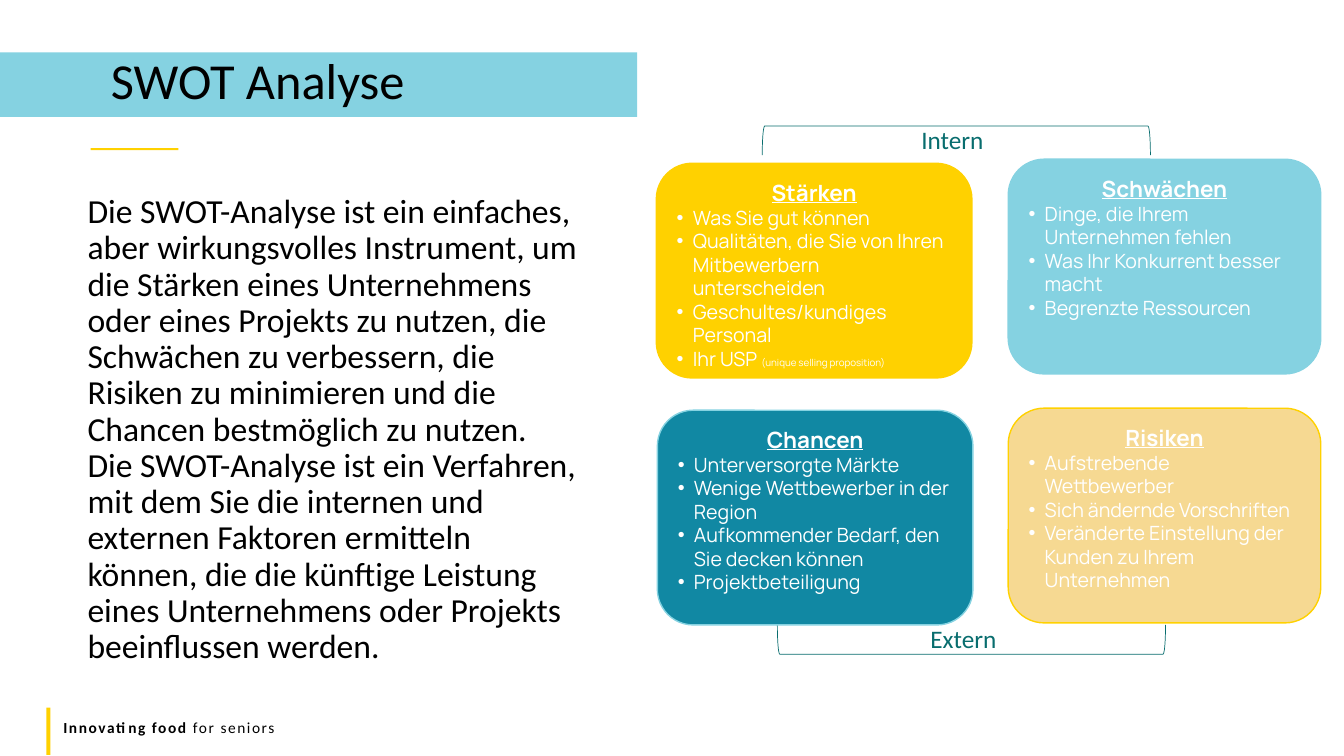
from lxml.etree import SubElement
from pptx import Presentation
from pptx.dml.color import RGBColor
from pptx.enum.shapes import MSO_SHAPE
from pptx.enum.text import MSO_ANCHOR, PP_ALIGN
from pptx.oxml.ns import qn
from pptx.util import Pt

PX = 9144  # EMU per px, 100 px to the inch
YELLOW, SKY, TEAL, SAND = "FFD100", "85D2E1", "1188A3", "F6D992"
GREEN, BLACK, WHITE = "086D6E", "000000", "FFFFFF"
hue = RGBColor.from_string

deck = Presentation()
deck.slide_width, deck.slide_height = 1333 * PX, 750 * PX
slide = deck.slides.add_slide(deck.slide_layouts[5])
shapes = slide.shapes


def draw(kind, at, fill=None, line=None, width=1):
    """Add a preset shape, or a text box when kind is None."""
    area = [n * PX for n in at]
    if kind is None:
        item = shapes.add_textbox(*area)
        item.text_frame.word_wrap = True
        return item
    item = shapes.add_shape(kind, *area)
    item.shadow.inherit = False
    for part, tint in ((item.fill, fill), (item.line.fill, line)):
        if tint:
            part.solid()
            part.fore_color.rgb = hue(tint)
        else:
            part.background()
    if line:
        item.line.width = Pt(width)
    return item


def write(par, text, size, tint, name="Calibri", **form):
    run = par.add_run()
    run.text = text
    form.update(size=Pt(size), name=name)
    for key, value in form.items():
        setattr(run.font, key, value)
    run.font.color.rgb = hue(tint)
    return run


# Title band and accents
title = shapes.title
band = {"left": 0, "top": 52, "width": 632, "height": 64}
for key, value in band.items():
    setattr(title, key, value * PX)
title.fill.solid()
title.fill.fore_color.rgb = hue(SKY)
frame = title.text_frame
look = {"margin_left": 110 * PX, "vertical_anchor": MSO_ANCHOR.MIDDLE, "word_wrap": True}
for key, value in look.items():
    setattr(frame, key, value)
par = frame.paragraphs[0]
par.alignment, par.line_spacing = PP_ALIGN.LEFT, 0.8
write(par, "SWOT Analyse", 36, BLACK)

for at in ((90, 147, 87, 2), (46, 702, 4, 47)):
    draw(MSO_SHAPE.RECTANGLE, at, YELLOW)

# Footer
par = draw(None, (53, 707, 1200, 29)).text_frame.paragraphs[0]
for text, bold in (("Innovating food ", True), ("for seniors", False)):
    run = write(par, text, 11, BLACK, bold=bold)
    run.font._element.set("spc", "110")

# Explanation
frame = draw(None, (77, 188, 506, 483)).text_frame
par = frame.paragraphs[0]
par.line_spacing = 0.9
write(par, "Die SWOT-Analyse ist ein einfaches, aber wirkungsvolles Instrument, "
      "um die Stärken eines Unternehmens oder eines Projekts zu nutzen, "
      "die Schwächen zu verbessern, die Risiken zu minimieren und die Chancen "
      "bestmöglich zu nutzen. Die SWOT-Analyse ist ein Verfahren, mit dem Sie "
      "die internen und externen Faktoren ermitteln können, die die künftige "
      "Leistung eines Unternehmens oder Projekts beeinflussen werden.", 24, BLACK)

# Brackets with their labels
for label, at, turn, spot in (
    ("Intern", (934, -53, 29, 385), 90, (904, 118, 104, 40)),
    ("Extern", (949, 442, 29, 385), 270, (913, 613, 104, 40)),
):
    draw(MSO_SHAPE.LEFT_BRACKET, at, line=GREEN, width=0.5).rotation = turn
    write(draw(None, spot).text_frame.paragraphs[0], label, 18, GREEN)

# SWOT cards
cards = (
    ("Stärken", (651, 162, 313, 213), YELLOW, YELLOW, (
        "Was Sie gut können",
        "Qualitäten, die Sie von Ihren Mitbewerbern unterscheiden",
        "Geschultes/kundiges Personal", "Ihr USP ")),
    ("Schwächen", (1000, 158, 310, 213), SKY, SKY, (
        "Dinge, die Ihrem Unternehmen fehlen",
        "Was Ihr Konkurrent besser macht", "Begrenzte Ressourcen")),
    ("Chancen", (652, 407, 313, 213), TEAL, SKY, (
        "Unterversorgte Märkte", "Wenige Wettbewerber in der Region",
        "Aufkommender Bedarf, den Sie decken können", "Projektbeteiligung")),
    ("Risiken", (1000, 405, 310, 213), SAND, YELLOW, (
        "Aufstrebende Wettbewerber", "Sich ändernde Vorschriften",
        "Veränderte Einstellung der Kunden zu Ihrem Unternehmen")),
)
for head, at, fill, line, points in cards:
    frame = draw(MSO_SHAPE.ROUNDED_RECTANGLE, at, fill, line).text_frame
    frame.vertical_anchor = MSO_ANCHOR.TOP
    par = frame.paragraphs[0]
    par.alignment = PP_ALIGN.CENTER
    write(par, head, 16, WHITE, "Manrope", bold=True, underline=True)
    for point in points:
        par = frame.add_paragraph()
        par.alignment = PP_ALIGN.LEFT
        props = par._p.get_or_add_pPr()
        props.set("marL", str(16 * PX))
        props.set("indent", str(-16 * PX))
        SubElement(props, qn("a:buFont"), typeface="Arial")
        SubElement(props, qn("a:buChar"), char="•")
        write(par, point, 14, WHITE, "Manrope")
        if point == "Ihr USP ":
            write(par, "(unique selling proposition)", 7, WHITE, "Manrope")

deck.save("out.pptx")
